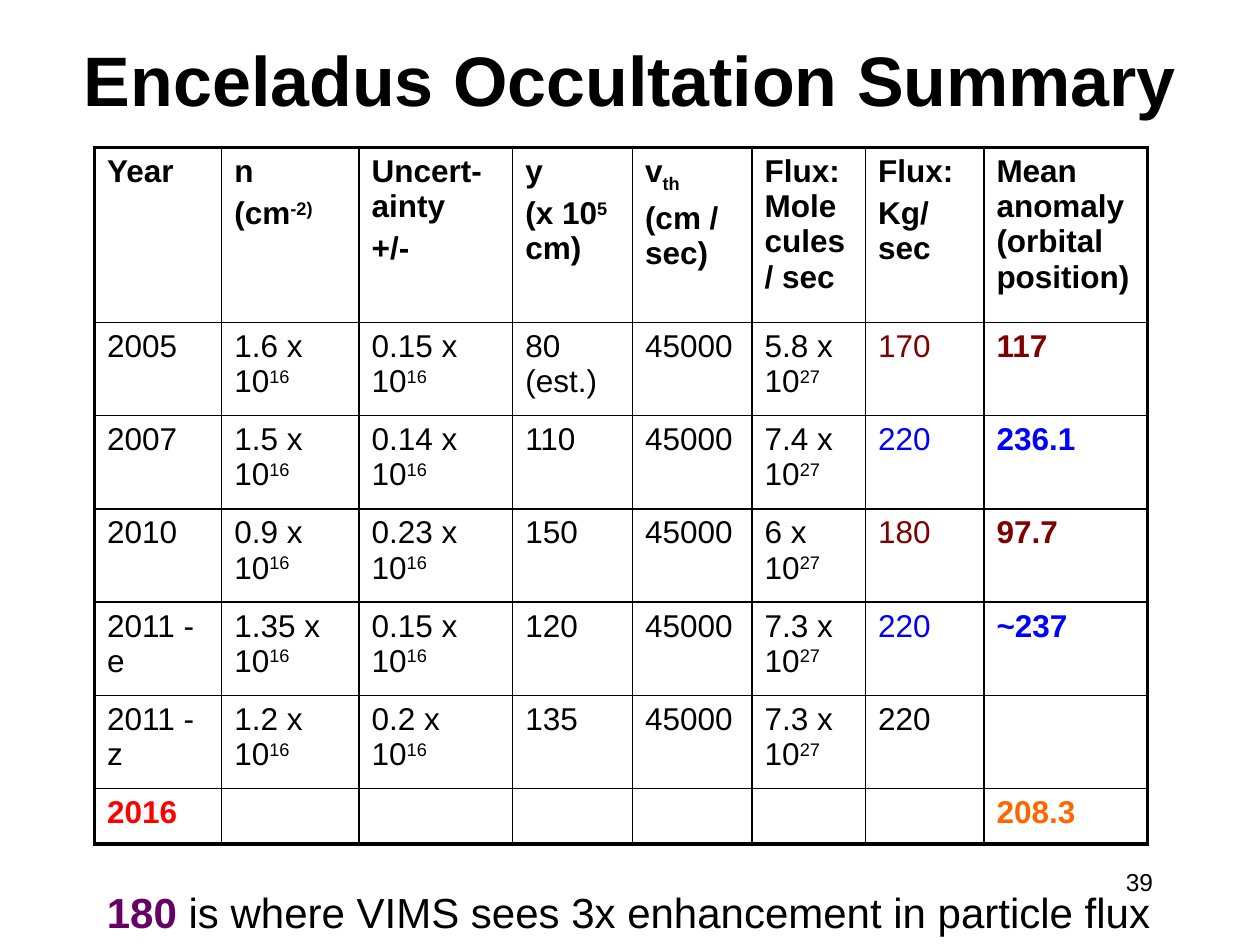
from lxml import etree
from pptx import Presentation
from pptx.dml.color import RGBColor
from pptx.enum.text import MSO_ANCHOR, PP_ALIGN
from pptx.oxml.ns import qn
from pptx.util import Inches, Pt

CENTER, RIGHT = PP_ALIGN.CENTER, PP_ALIGN.RIGHT
MIDDLE = MSO_ANCHOR.MIDDLE
TITLE_ONLY = 5
FONT = "Arial"
BLACK, WHITE = "000000", "FFFFFF"
MAROON, BLUE, RED, ORANGE, PURPLE = "800000", "0000FF", "FF0000", "FF6600", "660066"
BASELINES = {"^": "30000", "_": "-25000"}
OUTER_LINE, INNER_LINE = 2.25, 1

COLUMN_WIDTHS = [1.01, 1.09, 1.22, 0.95, 0.95, 0.9, 0.94, 1.3]
ROW_HEIGHTS = [1.39] + [0.74] * 5 + [0.44]

# A bar separates runs; a run led by ^ is superscript, by _ subscript.
HEADERS = ["Year", "n\n(cm|^-2)", "Uncert-ainty\n+/-", "y\n(x 10|^5| cm)",
           "v|_th\n(cm / sec)", "Flux: Molecules / sec", "Flux:\nKg/sec",
           "Mean anomaly (orbital position)"]
# Year, density, uncertainty, y, molecule flux, mass flux, mean anomaly, accent
OCCULTATIONS = [
    ("2005", "1.6", "0.15", "80 (est.)", "5.8", "170", "117", MAROON),
    ("2007", "1.5", "0.14", "110", "7.4", "220", "236.1", BLUE),
    ("2010", "0.9", "0.23", "150", "6", "180", "97.7", MAROON),
    ("2011 - e", "1.35", "0.15", "120", "7.3", "220", "~237", BLUE),
    ("2011 - z", "1.2", "0.2", "135", "7.3", "220", "", BLACK),
]
THERMAL_SPEED = "45000"


def color(value):
    return RGBColor.from_string(value)


def format_font(font, size, fill=BLACK, bold=False):
    font.name, font.size, font.bold = FONT, Pt(size), bold
    font.color.rgb = color(fill)


def place(shape, box):
    shape.left, shape.top, shape.width, shape.height = map(Inches, box)


def write_cell(cell, text, fill=BLACK, bold=False):
    """Write marked-up text, one paragraph per line."""
    for index, line in enumerate(text.split("\n")):
        frame = cell.text_frame
        paragraph = frame.add_paragraph() if index else frame.paragraphs[0]
        paragraph.space_before = Pt(4 if index else 0)
        format_font(paragraph.font, 18, fill, bold)
        for part in line.split("|"):
            baseline = BASELINES.get(part[:1])
            run = paragraph.add_run()
            run.text = part[1:] if baseline else part
            format_font(run.font, 18, fill, bold)
            if baseline:
                run.font._element.set("baseline", baseline)


def set_borders(cell, widths):
    """Draw the left, right, top and bottom lines, in that order."""
    properties = cell._tc.get_or_add_tcPr()
    for position, (side, width) in enumerate(zip("LRTB", widths)):
        line = etree.Element(qn(f"a:ln{side}"), w=str(Pt(width)))
        solid = etree.SubElement(line, qn("a:solidFill"))
        etree.SubElement(solid, qn("a:srgbClr"), val=BLACK)
        properties.insert(position, line)


def table_rows():
    """Return rows of (text, colour, bold) cells."""
    rows = [[(header, BLACK, True) for header in HEADERS]]
    for year, density, error, y, molecules, mass, anomaly, accent in OCCULTATIONS:
        plain = [year, f"{density} x 10|^16", f"{error} x 10|^16", y,
                 THERMAL_SPEED, f"{molecules} x 10|^27"]
        rows.append([(text, BLACK, False) for text in plain]
                    + [(mass, accent, False), (anomaly, accent, True)])
    rows.append([("2016", RED, True)] + [("", BLACK, False)] * 6
                + [("208.3", ORANGE, True)])
    return rows


def add_title(slide, box):
    title = slide.shapes.title
    place(title, box)
    title.text_frame.text = "Enceladus Occultation Summary"
    title.text_frame.vertical_anchor = MIDDLE
    # The heading is wider than its box less the side insets.
    title.text_frame.word_wrap = True
    paragraph = title.text_frame.paragraphs[0]
    paragraph.alignment = CENTER
    format_font(paragraph.font, 40, bold=True)


def add_summary_table(slide, left, top):
    rows = table_rows()
    last_row, last_column = len(rows) - 1, len(HEADERS) - 1
    box = (left, top, sum(COLUMN_WIDTHS), sum(ROW_HEIGHTS))
    table = slide.shapes.add_table(len(rows), len(HEADERS), *map(Inches, box)).table
    table.first_row = table.horz_banding = False
    for column, width in zip(table.columns, COLUMN_WIDTHS):
        column.width = Inches(width)
    for row, height in zip(table.rows, ROW_HEIGHTS):
        row.height = Inches(height)
    for r, row in enumerate(rows):
        for c, content in enumerate(row):
            cell = table.cell(r, c)
            cell.fill.solid()
            cell.fill.fore_color.rgb = color(WHITE)
            write_cell(cell, *content)
            edges = (c == 0, c == last_column, r == 0, r == last_row)
            set_borders(cell, [OUTER_LINE if edge else INNER_LINE for edge in edges])


def add_text(slide, box, runs, size, alignment=None, wrap=True):
    """Add one line made of (text, colour, bold) runs."""
    frame = slide.shapes.add_textbox(*map(Inches, box)).text_frame
    frame.word_wrap = wrap
    paragraph = frame.paragraphs[0]
    paragraph.alignment = alignment
    for text, fill, bold in runs:
        run = paragraph.add_run()
        run.text = text
        format_font(run.font, size, fill, bold)


def main():
    presentation = Presentation()
    presentation.slide_width, presentation.slide_height = Inches(10), Inches(7.5)
    slide = presentation.slides.add_slide(presentation.slide_layouts[TITLE_ONLY])
    add_title(slide, (0.5, 0, 9, 1.25))
    add_summary_table(slide, 0.75, 1.17)
    add_text(slide, (0.75, 6.99, 8.56, 0.51),
             [("180", PURPLE, True),
              (" is where VIMS sees 3x enhancement in particle flux", BLACK, False)],
             24, wrap=False)
    add_text(slide, (7.17, 6.83, 2.08, 0.5), [("39", BLACK, False)], 14, RIGHT)
    presentation.save("out.pptx")


if __name__ == "__main__":
    main()
